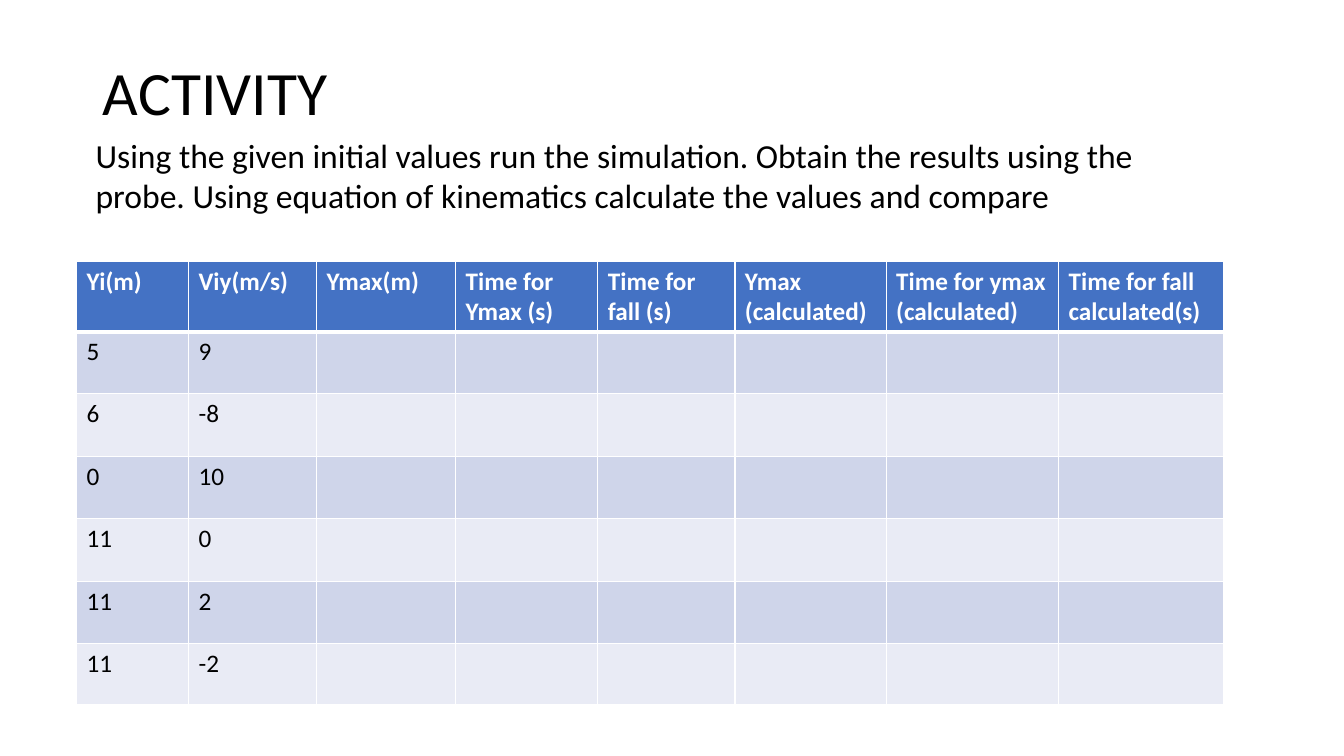
"""Build the ACTIVITY slide with its table of initial values and results."""
import dataclasses

import lxml.etree
import pptx
import pptx.dml.color
import pptx.enum.text
import pptx.oxml.ns
import pptx.util

PX = 9144
HEADINGS = [
    ["Yi(m)"], ["Viy(m/s)"], ["Ymax(m)"], ["Time for", "Ymax (s)"],
    ["Time for", "fall (s)"], ["Ymax", "(calculated)"],
    ["Time for ymax (calculated)"], ["Time for fall calculated(s)"],
]
INITIAL_VALUES = [("5", "9"), ("6", "-8"), ("0", "10"), ("11", "0"), ("11", "2"), ("11", "-2")]
COLUMN_WIDTHS = [111, 127, 138, 141, 136, 150, 171, 164]
ROW_HEIGHTS = [63, 61, 63, 61, 63, 61, 61]


@dataclasses.dataclass(frozen=True)
class Theme:
    font: str = "Calibri"
    ink: str = "000000"
    paper: str = "FFFFFF"
    header: str = "4472C4"
    bands: tuple = ("CFD5EA", "E9EBF5")
    title_size: int = 44
    body_size: int = 24
    table_size: int = 18
    rule: int = 1
    header_rule: int = 3


class SlideBuilder:
    def __init__(self, slide, theme):
        self.slide = slide
        self.theme = theme

    def add_lines(self, frame, lines, size, color, bold=False, spacing=None):
        for index, line in enumerate(lines):
            para = frame.paragraphs[0] if index == 0 else frame.add_paragraph()
            para.alignment = pptx.enum.text.PP_ALIGN.LEFT
            if spacing:
                para.line_spacing = spacing
            span = para.add_run()
            span.text = line
            span.font.name = self.theme.font
            span.font.size = pptx.util.Pt(size)
            span.font.bold = bold
            span.font.color.rgb = pptx.dml.color.RGBColor.from_string(color)

    def title(self, text, left, top, width, height):
        box = self.slide.shapes.title
        box.left, box.top, box.width, box.height = (n * PX for n in (left, top, width, height))
        frame = box.text_frame
        frame.auto_size = pptx.enum.text.MSO_AUTO_SIZE.NONE
        frame.vertical_anchor = pptx.enum.text.MSO_ANCHOR.MIDDLE
        self.add_lines(frame, [text], self.theme.title_size, self.theme.ink, spacing=0.9)

    def text(self, text, left, top, width, height):
        box = self.slide.shapes.add_textbox(*(n * PX for n in (left, top, width, height)))
        frame = box.text_frame
        frame.word_wrap = True
        frame.auto_size = pptx.enum.text.MSO_AUTO_SIZE.SHAPE_TO_FIT_TEXT
        self.add_lines(frame, [text], self.theme.body_size, self.theme.ink)

    def borders(self, cell, top, bottom):
        qn = pptx.oxml.ns.qn
        properties = cell._tc.get_or_add_tcPr()
        rule = self.theme.rule
        for side, width in (("L", rule), ("R", rule), ("T", top), ("B", bottom)):
            line = lxml.etree.SubElement(properties, qn(f"a:ln{side}"), w=str(pptx.util.Pt(width)))
            fill = lxml.etree.SubElement(line, qn("a:solidFill"))
            lxml.etree.SubElement(fill, qn("a:srgbClr"), val=self.theme.paper)

    def table(self, rows, left, top, widths, heights):
        theme = self.theme
        bounds = (left, top, sum(widths), sum(heights))
        table = self.slide.shapes.add_table(
            len(heights), len(widths), *(n * PX for n in bounds)).table
        for column, width in zip(table.columns, widths):
            column.width = width * PX
        for index, (row, height) in enumerate(zip(table.rows, heights)):
            row.height = height * PX
            is_header = index == 0
            fill = theme.header if is_header else theme.bands[(index - 1) % 2]
            color = theme.paper if is_header else theme.ink
            above = theme.header_rule if index == 1 else theme.rule
            below = theme.header_rule if is_header else theme.rule
            for cell in row.cells:
                self.borders(cell, above, below)
                cell.fill.solid()
                cell.fill.fore_color.rgb = pptx.dml.color.RGBColor.from_string(fill)
            for cell, lines in zip(row.cells, rows[index]):
                self.add_lines(cell.text_frame, lines, theme.table_size, color, is_header)


def main():
    deck = pptx.Presentation()
    deck.slide_width, deck.slide_height = 1333 * PX, 750 * PX
    builder = SlideBuilder(deck.slides.add_slide(deck.slide_layouts[5]), Theme())
    builder.title("ACTIVITY", 92, 40, 1150, 110)
    builder.text(
        "Using the given initial values run the simulation. Obtain the results using the probe. "
        "Using equation of kinematics calculate the values and compare", 85, 129, 1140, 91)
    rows = [HEADINGS] + [[[value] for value in pair] for pair in INITIAL_VALUES]
    builder.table(rows, 76, 259, COLUMN_WIDTHS, ROW_HEIGHTS)
    deck.save("out.pptx")


if __name__ == "__main__":
    main()
